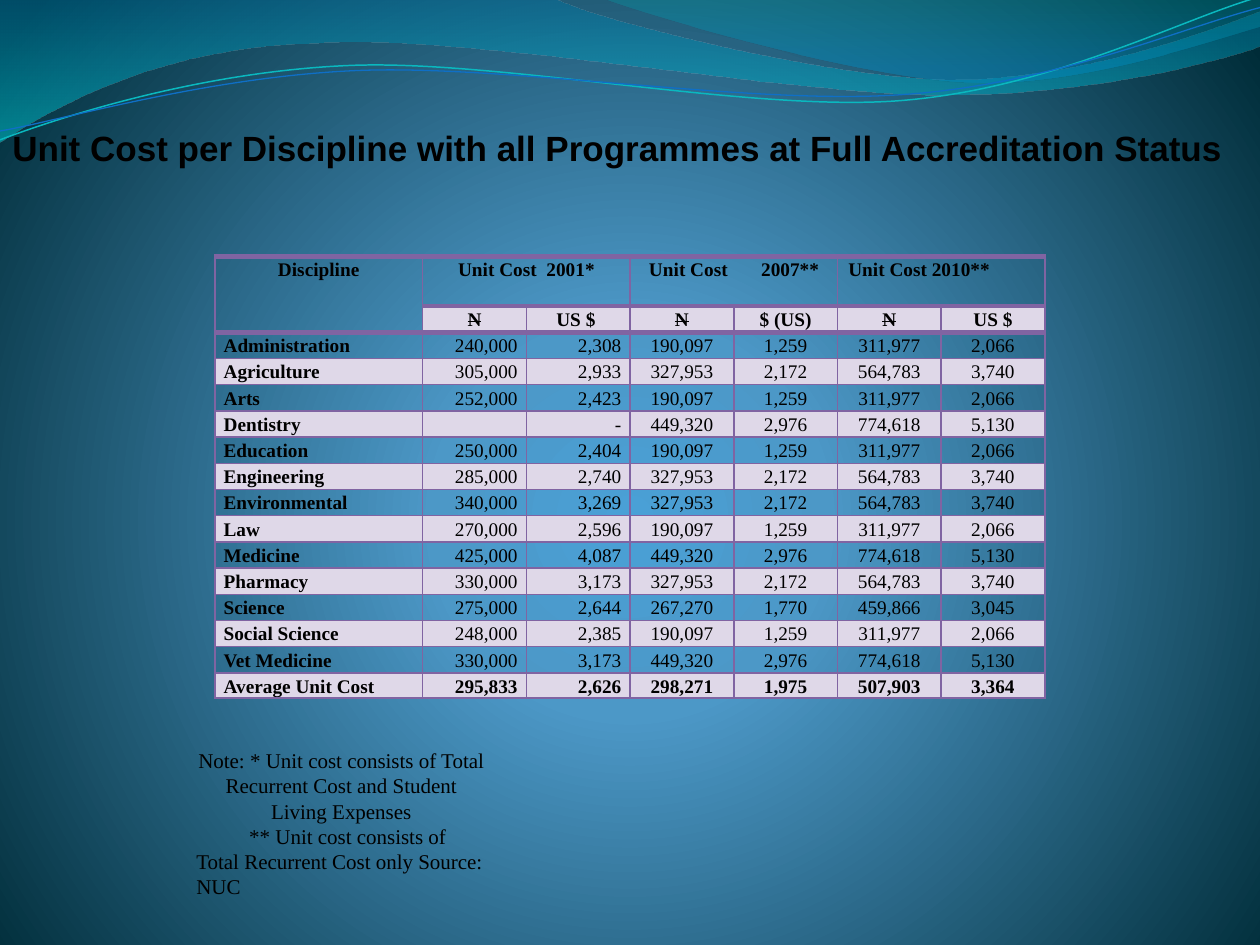
"""Build the slide of unit costs per discipline."""
from dataclasses import dataclass
from math import cos, radians, sin
from typing import NamedTuple, Optional

from lxml.etree import SubElement
from pptx import Presentation
from pptx.dml.color import RGBColor as Color
from pptx.enum.text import MSO_ANCHOR as Anchor, PP_ALIGN as Align
from pptx.oxml.ns import qn
from pptx.util import Inches, Pt

UNIT = Inches(0.1)
COLUMNS, ROWS = 100, 75
COLORS = {
    "ink": "000000", "border": "8064A2", "band": "DFD8E8",
    "glow": "4AA0D6", "sky": "4C98C7", "deep": "002C38",
    "ocean": "0074A1", "aqua": "00C6CF", "teal": "00A1A9", "azure": "008BBF",
    "cyan line": "0AB8BF", "blue line": "0F6FC6",
}
SERIF = {"name": "Times New Roman", "size": Pt(11), "bold": False}
NOTE = {**SERIF, "size": Pt(12)}
TITLE = {"name": "Arial", "size": Pt(20), "bold": True}
CELL = {"margin_left": Inches(0.07), "margin_right": Inches(0.07), "margin_top": 0, "margin_bottom": 0}


class Stop(NamedTuple):
    place: int
    color: str
    opacity: int = 100


class Area(NamedTuple):
    left: float
    top: float
    width: float
    height: float


@dataclass
class Wave:
    start: tuple
    steps: list
    stops: Optional[list] = None
    line: str = ""
    weight: float = 0
    tilt: float = 0
    pivot: tuple = (0, 0)


BACKDROP = [Stop(0, "glow"), Stop(25, "sky"), Stop(100, "deep")]
WAVES = [
    Wave((0, 0), [(44, -0.1), (47.6, 1.7, 66.4, 6.3, 75.8, 6.3), (85.3, 6.3, 95.8, 2.6, 100, 0.9),
                  (100.1, 3.6), (98.3, 4.4, 87, 7.6, 74.6, 7.5), (62.2, 7.5, 38.2, 2.8, 25.7, 3.4),
                  (12.9, 3.6, 4.6, 8.3, -0.1, 11.3), (0, 0)],
         stops=[Stop(0, "ocean", 45), Stop(100, "aqua", 55)]),
    Wave((47.9, -0.1), [(50.9, 1.1, 68.2, 6.2, 76.9, 6.5), (85.6, 6.9, 96.1, 3.2, 100, 2.1),
                        (100, 0), (47.9, -0.1)],
         stops=[Stop(0, "teal", 30), Stop(80, "azure", 45)]),
    Wave((0, 11.1), [(4.8, 9.3, 15.8, 5.7, 27.7, 5.2), (39.5, 4.7, 59.3, 8.9, 71.3, 8),
                     (83.3, 7.1, 93.8, 1.5, 99.8, -0.2)],
         line="cyan line", weight=0.85, tilt=-2.7, pivot=(49.9, 5.75)),
    Wave((0, 10.4), [(4.7, 9.6, 16.4, 6.1, 28.3, 5.6), (40.3, 5.1, 59.7, 8.4, 71.7, 7.5),
                     (83.6, 6.7, 94.1, 2.1, 100, 0.6)],
         line="blue line", weight=0.75, tilt=-2.7, pivot=(49.95, 5.9)),
]
HEADINGS = ["Discipline", "Unit Cost  2001*", "", "Unit Cost\t2007**", "", "Unit Cost 2010**", ""]
UNITS = ["", "N", "US $ ", "N", "$ (US)", "N", "US $"]
COSTS = """Administration|240,000|2,308|190,097|1,259|311,977|2,066
Agriculture|305,000|2,933|327,953|2,172|564,783|3,740
Arts|252,000|2,423|190,097|1,259|311,977|2,066
Dentistry||-|449,320|2,976|774,618|5,130
Education|250,000|2,404|190,097|1,259|311,977|2,066
Engineering|285,000|2,740|327,953|2,172|564,783|3,740
Environmental|340,000|3,269|327,953|2,172|564,783|3,740
Law|270,000|2,596|190,097|1,259|311,977|2,066
Medicine|425,000|4,087|449,320|2,976|774,618|5,130
Pharmacy|330,000|3,173|327,953|2,172|564,783|3,740
Science|275,000|2,644|267,270|1,770|459,866|3,045
Social Science|248,000|2,385|190,097|1,259|311,977|2,066
Vet Medicine|330,000|3,173|449,320|2,976|774,618|5,130
Average Unit Cost|295,833|2,626|298,271|1,975|507,903|3,364"""


def units(count: float) -> int:
    return round(count * UNIT)


def apply(target, values: dict) -> None:
    for name, value in values.items():
        setattr(target, name, value)


def rgb(name: str) -> Color:
    return Color.from_string(COLORS[name])


def set_gradient(fill, holder, stops: list, radial: bool = False) -> None:
    fill.gradient()
    gradient = holder.find(".//" + qn("a:gradFill"))
    for child in list(gradient):
        gradient.remove(child)
    stop_list = SubElement(gradient, qn("a:gsLst"))
    for stop in stops:
        mark = SubElement(stop_list, qn("a:gs"), pos=str(stop.place * 1000))
        tint = SubElement(mark, qn("a:srgbClr"), val=COLORS[stop.color])
        if stop.opacity < 100:
            SubElement(tint, qn("a:alpha"), val=str(stop.opacity * 1000))
    if radial:
        route = SubElement(gradient, qn("a:path"), path="circle")
        SubElement(route, qn("a:fillToRect"), l="10000", t="110000", r="10000", b="100000")
    else:
        SubElement(gradient, qn("a:lin"), ang="5400000", scaled="0")


def level(wave: Wave, values: tuple) -> list:
    angle, (middle, center) = radians(-wave.tilt), wave.pivot
    points = []
    for x, y in zip(values[::2], values[1::2]):
        across, down = x - middle, y - center
        points.append((units(middle + across * cos(angle) - down * sin(angle)),
                       units(center + across * sin(angle) + down * cos(angle))))
    return points


def draw_wave(page, wave: Wave) -> None:
    steps = [level(wave, step) for step in wave.steps]
    builder = page.shapes.build_freeform(*level(wave, wave.start)[0], scale=1.0)
    builder.add_line_segments([step[-1] for step in steps], close=bool(wave.stops))
    shape = builder.convert_to_shape()
    for segment, step in zip(list(shape._element.iter(qn("a:lnTo"))), steps):
        if len(step) == 3:
            segment.tag = qn("a:cubicBezTo")
            segment.remove(segment[0])
            for x, y in step:
                SubElement(segment, qn("a:pt"), x=str(x - shape.left), y=str(y - shape.top))
    shape.rotation = wave.tilt
    shape.shadow.inherit = False
    if wave.stops:
        set_gradient(shape.fill, shape._element.spPr, wave.stops)
        shape.line.fill.background()
    else:
        shape.fill.background()
        shape.line.color.rgb = rgb(wave.line)
        shape.line.width = Pt(wave.weight)


def write(para, text: str, font: dict, align: Align = Align.LEFT):
    para.alignment = align
    span = para.add_run()
    span.text = text
    apply(span.font, font)
    span.font.color.rgb = rgb("ink")
    return span


def draw_borders(cell, top: float, bottom: float) -> None:
    for side, weight in {"L": 1, "R": 1, "T": top, "B": bottom}.items():
        line = SubElement(cell._tc.get_or_add_tcPr(), qn("a:ln" + side), w=str(Pt(weight)))
        SubElement(SubElement(line, qn("a:solidFill")), qn("a:srgbClr"), val=COLORS["border"])


def fill_cell(cell, text: str, row: int, column: int, last: int) -> None:
    apply(cell, CELL)
    top = {0: 3, 1: 2.25, 2: 3}.get(row, 1)
    bottom = 3 if row == 1 or (row, column) == (0, 0) else 2.25 if row == 0 else 1
    draw_borders(cell, top, bottom)
    if row % 2:
        cell.fill.solid()
        cell.fill.fore_color.rgb = rgb("band")
    else:
        cell.fill.background()
    para = cell.text_frame.paragraphs[0]
    para.line_spacing = 1.15
    if not text:
        SubElement(para._p, qn("a:endParaRPr"), sz="1100")
        return
    align = Align.CENTER
    if row > 1 and column < 3:
        align = Align.RIGHT if column else Align.LEFT
    if "\t" in text:
        align = Align.LEFT
        cell.margin_left = Inches(0.15)
        tabs = SubElement(para._p.get_or_add_pPr(), qn("a:tabLst"))
        SubElement(tabs, qn("a:tab"), pos=str(Inches(0.89)), algn="l")
    if (row, column) == (0, 5):
        cell.margin_right = Inches(0.42)
    span = write(para, text, {**SERIF, "bold": row < 2 or column == 0 or row == last}, align)
    if text == "N":
        span._r.get_or_add_rPr().set("strike", "sngStrike")


def draw_table(page, area: Area) -> None:
    records = [HEADINGS, UNITS] + [line.split("|") for line in COSTS.splitlines()]
    last = len(records) - 1
    table = page.shapes.add_table(len(records), len(UNITS), *map(units, area)).table
    apply(table, {"first_row": False, "horz_banding": False})
    for index, column in enumerate(table.columns):
        column.width = units(8.23 if index else 16.5)
    for index, row in enumerate(table.rows):
        row.height = units({0: 3.95, last: 2}.get(index, 2.08))
    table.cell(0, 0).merge(table.cell(1, 0))
    for column in (1, 3, 5):
        table.cell(0, column).merge(table.cell(0, column + 1))
    for row, record in enumerate(records):
        for column, text in enumerate(record):
            cell = table.cell(row, column)
            if not cell.is_spanned:
                fill_cell(cell, text, row, column, last)


def add_frame(page, area: Area, **settings):
    frame = page.shapes.add_textbox(*map(units, area)).text_frame
    apply(frame, settings)
    return frame


def main() -> None:
    deck = Presentation()
    apply(deck, {"slide_width": units(COLUMNS), "slide_height": units(ROWS)})
    page = deck.slides.add_slide(deck.slide_layouts[6])
    set_gradient(page.background.fill, page._element, BACKDROP, radial=True)
    for wave in WAVES:
        draw_wave(page, wave)
    draw_table(page, Area(17.05, 20.35, 65.88, 35))
    title = add_frame(page, Area(0, -9.1, 98.7, 23.2), word_wrap=False,
                      vertical_anchor=Anchor.BOTTOM, margin_bottom=Inches(0.07))
    write(title.paragraphs[0], "Unit Cost per Discipline with all Programmes at Full Accreditation Status", TITLE)
    note = add_frame(page, Area(14.6, 58.85, 25, 13.1), word_wrap=True)
    write(note.paragraphs[0], "Note: * Unit cost consists of Total Recurrent Cost and Student Living Expenses",
          NOTE, Align.CENTER)
    detail = note.add_paragraph()
    write(detail, "** Unit cost consists of Total Recurrent Cost only Source: NUC", NOTE)
    detail._p.get_or_add_pPr().set("indent", str(Inches(0.42)))
    deck.save("out.pptx")


if __name__ == "__main__":
    main()
